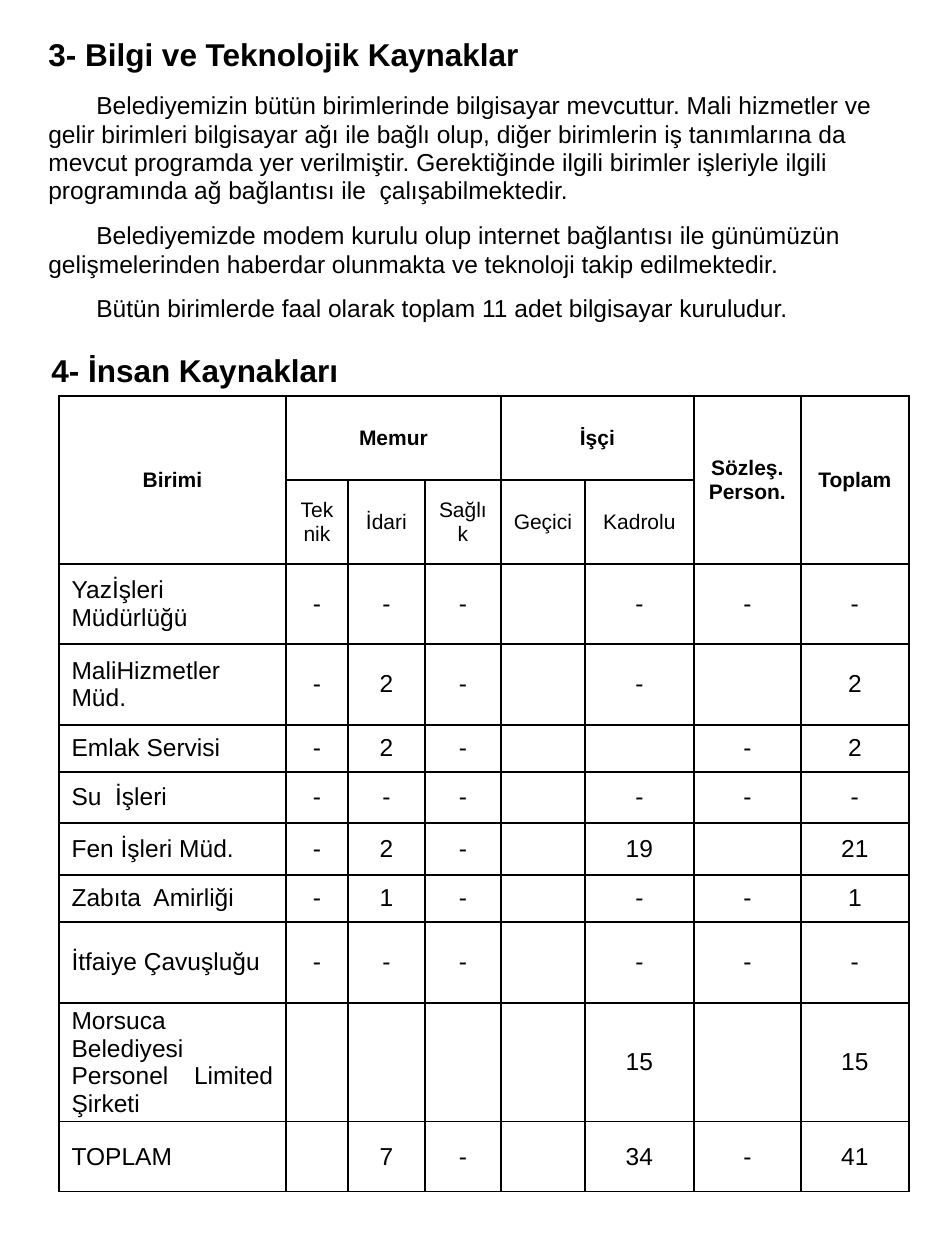
from lxml import etree
from pptx import Presentation
from pptx.dml.color import RGBColor
from pptx.enum.text import MSO_ANCHOR, PP_ALIGN
from pptx.oxml.ns import qn
from pptx.util import Pt

CENTER, JUSTIFY = PP_ALIGN.CENTER, PP_ALIGN.JUSTIFY
MIDDLE = MSO_ANCHOR.MIDDLE
PX = 914400 / 126
FONT = "Arial"
COLORS = {"text": "000000", "border": "000000", "background": "FFFFFF"}
INDENT = 48

INTRO_TITLE = "3- Bilgi ve Teknolojik Kaynaklar"
INTRO_BLOCKS = [
    ["Belediyemizin bütün birimlerinde bilgisayar mevcuttur. Mali hizmetler ve",
     "gelir birimleri bilgisayar ağı ile bağlı olup, diğer birimlerin iş tanımlarına da",
     "mevcut programda yer verilmiştir. Gerektiğinde ilgili birimler işleriyle ilgili",
     "programında ağ bağlantısı ile  çalışabilmektedir."],
    ["Belediyemizde modem kurulu olup internet bağlantısı ile günümüzün",
     "gelişmelerinden haberdar olunmakta ve teknoloji takip edilmektedir."],
    ["Bütün birimlerde faal olarak toplam 11 adet bilgisayar kuruludur."],
]
STAFF_TITLE = "4- İnsan Kaynakları"
COLUMN_WIDTHS = [227, 62, 77, 76, 84, 109, 107, 108]
ROW_HEIGHTS = [84, 84, 80, 81, 47, 51, 52, 47, 81, 119, 70]
STAFF_ROWS = [
    ["Birimi", "Memur", "", "", "İşçi", "", "Sözleş.\nPerson.", "Toplam"],
    ["", "Teknik", "İdari", "Sağlık", "Geçici", "Kadrolu", "", ""],
    ["Yazİşleri Müdürlüğü", "-", "-", "-", "", "-", "-", "-"],
    ["MaliHizmetler Müd.", "-", "2", "-", "", "-", "", "2"],
    ["Emlak Servisi", "-", "2", "-", "", "", "-", "2"],
    ["Su  İşleri", "-", "-", "-", "", "-", "-", "-"],
    ["Fen İşleri Müd.", "-", "2", "-", "", "19", "", "21"],
    ["Zabıta  Amirliği", "-", "1", "-", "", "-", "-", "1"],
    ["İtfaiye Çavuşluğu", "-", "-", "-", "", "-", "-", "-"],
    ["Morsuca Belediyesi Personel Limited Şirketi", "", "", "", "", "15", "", "15"],
    ["TOPLAM", "", "7", "-", "", "34", "-", "41"],
]
# First and last cell (row, column) of each merged header
HEADER_SPANS = [((0, 0), (1, 0)), ((0, 1), (0, 3)), ((0, 4), (0, 5)),
                ((0, 6), (1, 6)), ((0, 7), (1, 7))]


def px(length):
    return round(length * PX)


def style_paragraph(paragraph, size, bold=False):
    for run in paragraph.runs:
        run.font.name = FONT
        run.font.size = Pt(size)
        run.font.bold = bold
        run.font.color.rgb = RGBColor.from_string(COLORS["text"])


def add_text_frame(slide, box, top_margin):
    text_frame = slide.shapes.add_textbox(*map(px, box)).text_frame
    text_frame.word_wrap = True
    text_frame.margin_top = px(top_margin)
    return text_frame


def add_intro(slide, box):
    text_frame = add_text_frame(slide, box, 42)
    title = text_frame.paragraphs[0]
    title.text = INTRO_TITLE
    title.line_spacing = 0.8
    style_paragraph(title, 18, bold=True)
    for block_index, lines in enumerate(INTRO_BLOCKS):
        for line_index, line in enumerate(lines):
            paragraph = text_frame.add_paragraph()
            paragraph.text = line
            paragraph.line_spacing = 0.8
            if line_index:
                paragraph.space_before = Pt(2.8)
            else:
                paragraph.space_before = Pt(12.2 if block_index else 13.4)
                # The opening line of a block is indented
                properties = paragraph._p.get_or_add_pPr()
                properties.set("marL", "0")
                properties.set("indent", str(px(INDENT)))
            style_paragraph(paragraph, 14)


def add_staff_heading(slide, box):
    text_frame = add_text_frame(slide, box, 7)
    text_frame.text = STAFF_TITLE
    style_paragraph(text_frame.paragraphs[0], 18, bold=True)


def set_borders(cell):
    properties = cell._tc.get_or_add_tcPr()
    for index, side in enumerate(("a:lnL", "a:lnR", "a:lnT", "a:lnB")):
        line = etree.Element(qn(side), w=str(Pt(1)))
        fill = etree.SubElement(line, qn("a:solidFill"))
        etree.SubElement(fill, qn("a:srgbClr"), val=COLORS["border"])
        properties.insert(index, line)


def add_staff_table(slide, left, top):
    frame = slide.shapes.add_table(
        len(ROW_HEIGHTS), len(COLUMN_WIDTHS), px(left), px(top),
        px(sum(COLUMN_WIDTHS)), px(sum(ROW_HEIGHTS)))
    table = frame.table
    table.first_row = table.horz_banding = False
    for column, width in zip(table.columns, COLUMN_WIDTHS):
        column.width = px(width)
    for row, height in zip(table.rows, ROW_HEIGHTS):
        row.height = px(height)

    for first, last in HEADER_SPANS:
        table.cell(*first).merge(table.cell(*last))

    for row_index, values in enumerate(STAFF_ROWS):
        for column_index, value in enumerate(values):
            cell = table.cell(row_index, column_index)
            cell.text = value
            cell.vertical_anchor = MIDDLE
            cell.margin_top = cell.margin_bottom = 0
            cell.fill.background()
            set_borders(cell)
            is_name = row_index > 1 and column_index == 0
            for paragraph in cell.text_frame.paragraphs:
                paragraph.alignment = JUSTIFY if is_name else CENTER
                style_paragraph(paragraph, 14 if row_index > 1 else 12,
                                bold=row_index == 0)


def main():
    presentation = Presentation()
    presentation.slide_width, presentation.slide_height = px(945), px(1260)
    slide = presentation.slides.add_slide(presentation.slide_layouts[6])
    slide.background.fill.solid()
    slide.background.fill.fore_color.rgb = RGBColor.from_string(COLORS["background"])
    add_intro(slide, (36, 0, 883, 344))
    add_staff_heading(slide, (39, 344, 871, 39))
    add_staff_table(slide, 59, 396)
    presentation.save("out.pptx")


if __name__ == "__main__":
    main()
